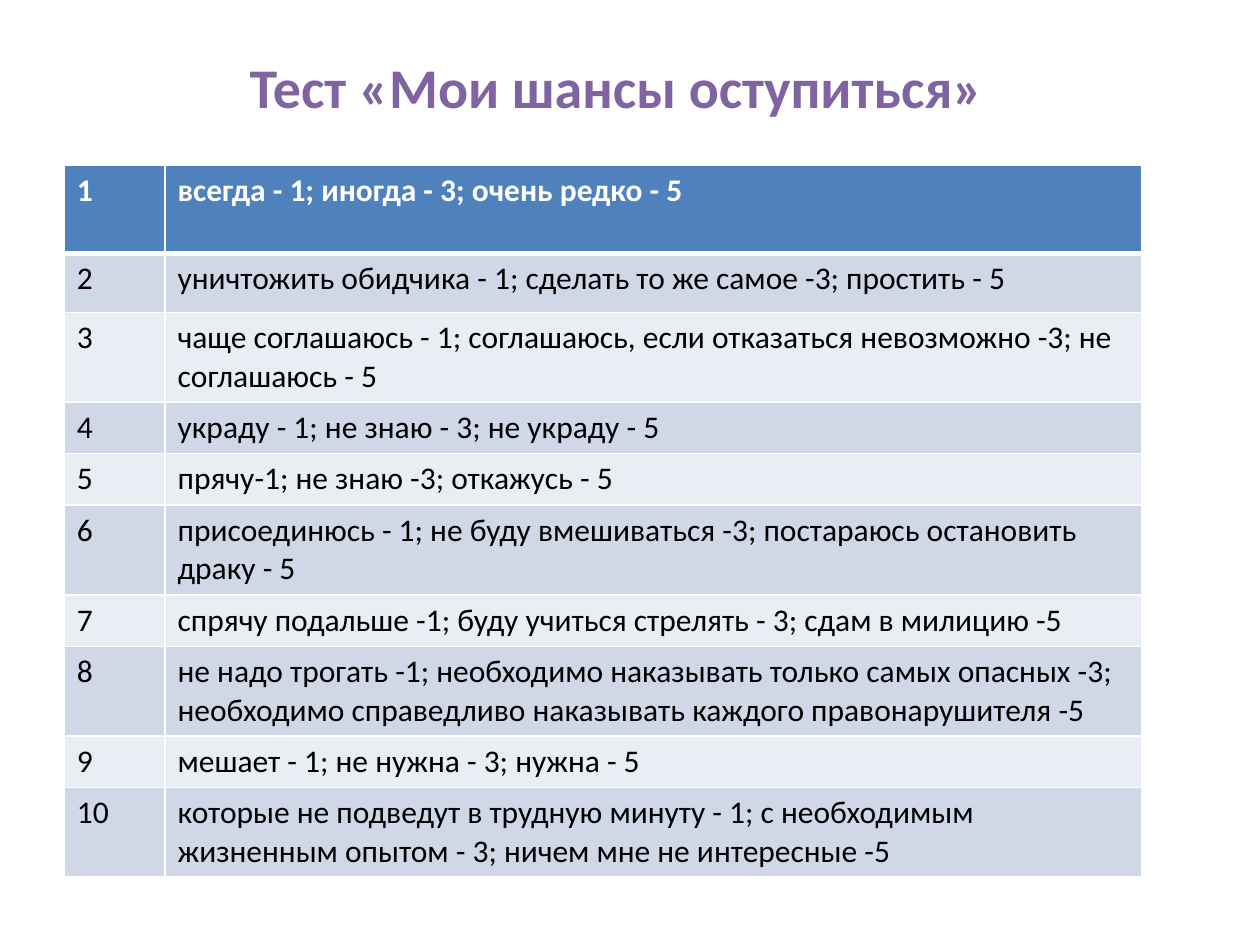
"""Build the answer key slide for a ten-question self-test."""
from lxml import etree
from pptx import Presentation
from pptx.dml.color import RGBColor
from pptx.enum.text import MSO_ANCHOR, PP_ALIGN
from pptx.oxml.ns import qn
from pptx.util import Inches, Pt

CENTER = PP_ALIGN.CENTER
MIDDLE = MSO_ANCHOR.MIDDLE
FONT = "Calibri"
COLORS = {
    "title": "8064A2",
    "header": "4F81BD",
    "odd": "D0D8E8",
    "even": "E9EDF4",
    "white": "FFFFFF",
    "text": "000000",
}
TITLE = "Тест «Мои шансы оступиться»"
ANSWERS = [
    ("всегда - 1; иногда - 3; очень редко - 5", 0.7),
    ("уничтожить обидчика - 1; сделать то же самое -3; простить - 5", 0.47),
    ("чаще соглашаюсь - 1; соглашаюсь, если отказаться невозможно -3; не соглашаюсь - 5", 0.71),
    ("украду - 1; не знаю - 3; не украду - 5", 0.41),
    ("прячу-1; не знаю -3; откажусь - 5", 0.41),
    ("присоединюсь - 1; не буду вмешиваться -3; постараюсь остановить драку - 5", 0.7),
    ("спрячу подальше -1; буду учиться стрелять - 3; сдам в милицию -5", 0.41),
    ("не надо трогать -1; необходимо наказывать только самых опасных -3;\n"
     "необходимо справедливо наказывать каждого правонарушителя -5", 0.7),
    ("мешает - 1; не нужна - 3; нужна - 5", 0.41),
    ("которые не подведут в трудную минуту - 1; с необходимым жизненным опытом - 3; "
     "ничем мне не интересные -5", 0.7),
]
COLUMN_WIDTHS = (0.8, 7.75)
TABLE_LEFT, TABLE_TOP = 0.51, 1.31


def add_text(paragraph, text, size, color, bold):
    for index, line in enumerate(text.split("\n")):
        if index:
            paragraph.add_line_break()
        run = paragraph.add_run()
        run.text = line
        run.font.name = FONT
        run.font.size = Pt(size)
        run.font.bold = bold
        run.font.color.rgb = RGBColor.from_string(COLORS[color])


def add_borders(cell, widths):
    properties = cell._tc.get_or_add_tcPr()
    for side, width in zip("LRTB", widths):
        border = etree.SubElement(properties, qn(f"a:ln{side}"), w=str(Pt(width)))
        fill = etree.SubElement(border, qn("a:solidFill"))
        etree.SubElement(fill, qn("a:srgbClr"), val=COLORS["white"])


def add_title(slide):
    title = slide.shapes.title
    title.left, title.top = Inches(1.31), Inches(0.36)
    title.width, title.height = Inches(7.17), Inches(0.64)
    frame = title.text_frame
    frame.vertical_anchor = MIDDLE
    frame.paragraphs[0].alignment = CENTER
    add_text(frame.paragraphs[0], TITLE, 32, "title", True)


def add_answers(slide):
    table = slide.shapes.add_table(
        len(ANSWERS), len(COLUMN_WIDTHS), Inches(TABLE_LEFT), Inches(TABLE_TOP),
        Inches(sum(COLUMN_WIDTHS)), Inches(sum(height for _, height in ANSWERS)),
    ).table
    for column, width in zip(table.columns, COLUMN_WIDTHS):
        column.width = Inches(width)
    for index, (answer, height) in enumerate(ANSWERS):
        table.rows[index].height = Inches(height)
        is_header = index == 0
        band = "header" if is_header else "odd" if index % 2 else "even"
        widths = (1, 1, 3 if index == 1 else 1, 3 if is_header else 1)
        for cell, text in zip(table.rows[index].cells, (str(index + 1), answer)):
            add_borders(cell, widths)
            cell.fill.solid()
            cell.fill.fore_color.rgb = RGBColor.from_string(COLORS[band])
            add_text(cell.text_frame.paragraphs[0], text, 18,
                     "white" if is_header else "text", is_header)


def main():
    presentation = Presentation()
    presentation.slide_width, presentation.slide_height = Inches(10), Inches(7.5)
    slide = presentation.slides.add_slide(presentation.slide_layouts[5])
    add_title(slide)
    add_answers(slide)
    presentation.save("out.pptx")


if __name__ == "__main__":
    main()
